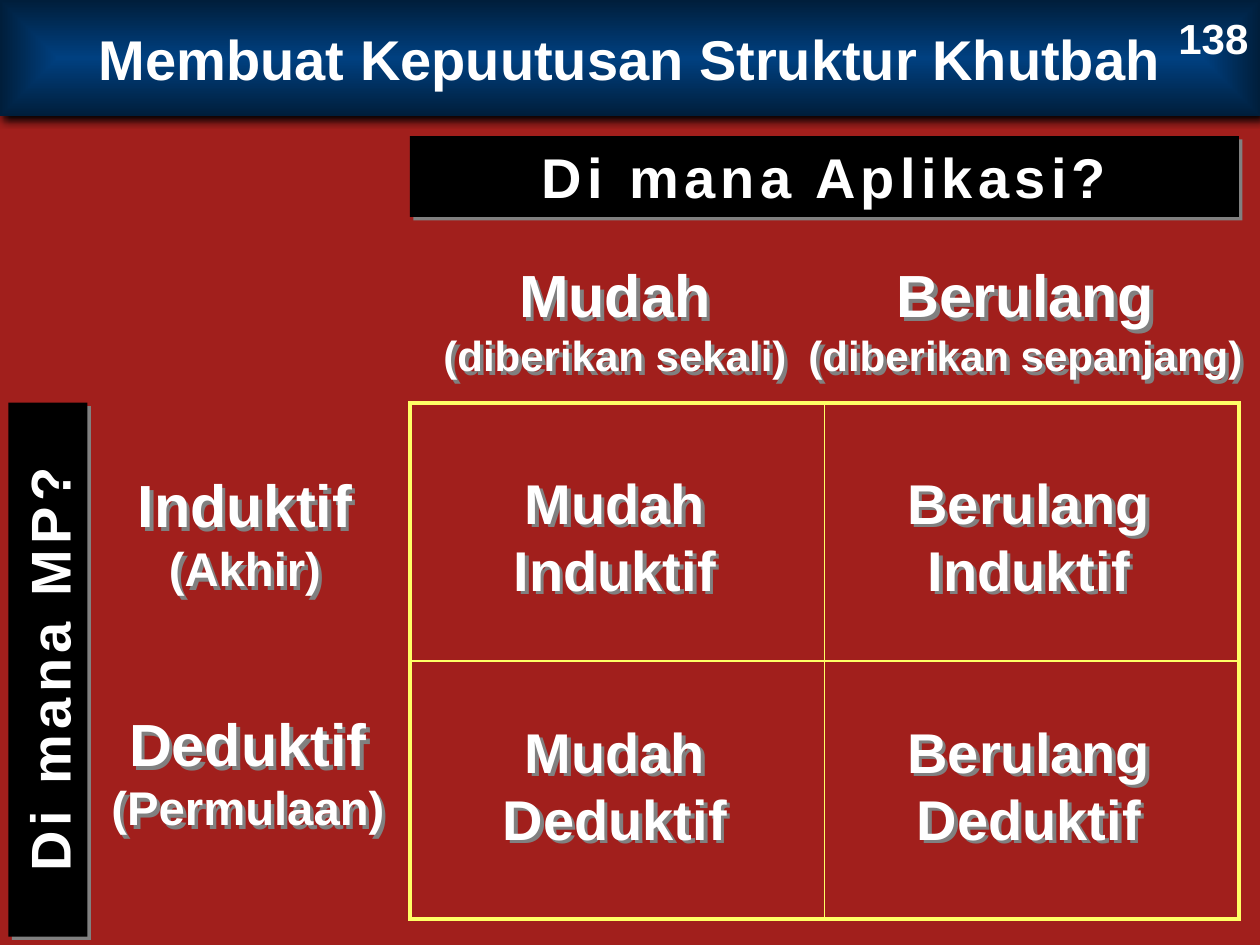
from lxml import etree
from pptx import Presentation
from pptx.dml.color import RGBColor
from pptx.enum.shapes import MSO_SHAPE
from pptx.enum.text import MSO_ANCHOR, PP_ALIGN
from pptx.oxml import parse_xml
from pptx.oxml.ns import nsdecls, qn
from pptx.util import Emu, Pt

RECT = MSO_SHAPE.RECTANGLE
TOP, MIDDLE = MSO_ANCHOR.TOP, MSO_ANCHOR.MIDDLE
LEFT, CENTER = PP_ALIGN.LEFT, PP_ALIGN.CENTER
EMU_PER_PX = 914400 / 126
FONT = "Arial"
WHITE, BLACK, GREY, RED, YELLOW = "FFFFFF", "000000", "808080", "A11F1C", "FFFF66"
NAVY, DARK_NAVY = "004080", "001E3B"


def px(length):
    return Emu(round(length * EMU_PER_PX))


def colour(value):
    return RGBColor.from_string(value)


def cast_shadow(shape, value, blur=0):
    shape.shadow.inherit = False
    effects = shape._element.spPr.find(qn("a:effectLst"))
    effects.append(parse_xml(
        f'<a:outerShdw {nsdecls("a")} blurRad="{Pt(blur)}" dist="{Pt(2.8)}" '
        f'dir="2700000" algn="ctr" rotWithShape="0"><a:srgbClr val="{value}"/></a:outerShdw>'))


def write(shape, lines, align=CENTER, anchor=TOP, wrap=True, spacing=0):
    frame = shape.text_frame
    frame.word_wrap = wrap
    frame.vertical_anchor = anchor
    for index, (text, size) in enumerate(lines):
        para = frame.add_paragraph() if index else frame.paragraphs[0]
        para.alignment = align
        para.line_spacing = Pt(1.2 * size)
        span = para.add_run()
        span.text = text
        span.font.name = FONT
        span.font.size = Pt(size)
        span.font.bold = True
        span.font.color.rgb = colour(WHITE)
        if spacing:
            span._r.get_or_add_rPr().set("spc", str(spacing * 100))


def add_panel(page, box):
    panel = page.shapes.add_shape(RECT, *map(px, box))
    panel.fill.solid()
    panel.fill.fore_color.rgb = colour(BLACK)
    panel.line.fill.background()
    return panel


def add_title(page, box, text):
    title = add_panel(page, box)
    solid = title._element.spPr.find(qn("a:solidFill"))
    solid.getparent().replace(solid, parse_xml(
        f'<a:gradFill {nsdecls("a")} rotWithShape="0"><a:gsLst>'
        f'<a:gs pos="0"><a:srgbClr val="{NAVY}"/></a:gs>'
        f'<a:gs pos="100000"><a:srgbClr val="{DARK_NAVY}"/></a:gs></a:gsLst>'
        '<a:path path="shape"><a:fillToRect l="50000" t="50000" r="50000" b="50000"/></a:path>'
        '</a:gradFill>'))
    cast_shadow(title, BLACK, blur=5)
    write(title, [(text, 32)], anchor=MIDDLE)


def add_question(page, box, text, rotation=0):
    question = add_panel(page, box)
    question.rotation = rotation
    cast_shadow(question, GREY)
    write(question, [(text, 32)], spacing=3)


def add_page_number(page, box, text):
    number = page.shapes.add_textbox(*map(px, box))
    write(number, [(text, 24)], align=LEFT, wrap=False)


def add_label(page, box, lines):
    label = page.shapes.add_textbox(*map(px, box))
    cast_shadow(label, GREY)
    write(label, lines)


def add_border(cell, side, width):
    properties = cell._tc.get_or_add_tcPr()
    line = etree.SubElement(properties, qn(f"a:ln{side}"), w=str(Pt(width)))
    fill = etree.SubElement(line, qn("a:solidFill"))
    etree.SubElement(fill, qn("a:srgbClr"), val=YELLOW)


def add_grid(page, box, count=2):
    table = page.shapes.add_table(count, count, *map(px, box)).table
    table.first_row = table.horz_banding = False
    last = count - 1
    for row in range(count):
        for column in range(count):
            cell = table.cell(row, column)
            outer = {"L": column == 0, "R": column == last, "T": row == 0, "B": row == last}
            for side, is_outer in outer.items():
                add_border(cell, side, 2.25 if is_outer else 1)
            cell.fill.background()


def main():
    deck = Presentation()
    deck.slide_width, deck.slide_height = px(1260), px(945)
    page = deck.slides.add_slide(deck.slide_layouts[6])
    page.background.fill.solid()
    page.background.fill.fore_color.rgb = colour(RED)

    add_title(page, (0, 0, 1260, 116), "Membuat Kepuutusan Struktur Khutbah")
    add_question(page, (410, 136, 829, 81), "Di mana Aplikasi?")
    add_page_number(page, (1166, 6, 96, 63), "138")
    add_question(page, (-219, 630, 534, 79), "Di mana MP?", rotation=270)

    columns = [("Mudah", "(diberikan sekali)", 410, 410), ("Berulang", "(diberikan sepanjang)", 795, 461)]
    for name, note, left, width in columns:
        add_label(page, (left, 252, width, 136), [(name, 34), (note, 24)])
    rows = [("Induktif", "(Akhir)", 462, 312, 462), ("Deduktif", "(Permulaan)", 701, 318, 711)]
    for name, note, top, width, _ in rows:
        add_label(page, (89, top, width, 144), [(name, 34), (note, 27)])

    add_grid(page, (410, 403, 829, 516))
    cells = [(410, 410), (819, 420)]
    for row_name, _, _, _, top in rows:
        for (column_name, *_), (left, width) in zip(columns, cells):
            add_label(page, (left, top, width, 149), [(column_name, 32), (row_name, 32)])

    deck.save("out.pptx")


if __name__ == "__main__":
    main()
